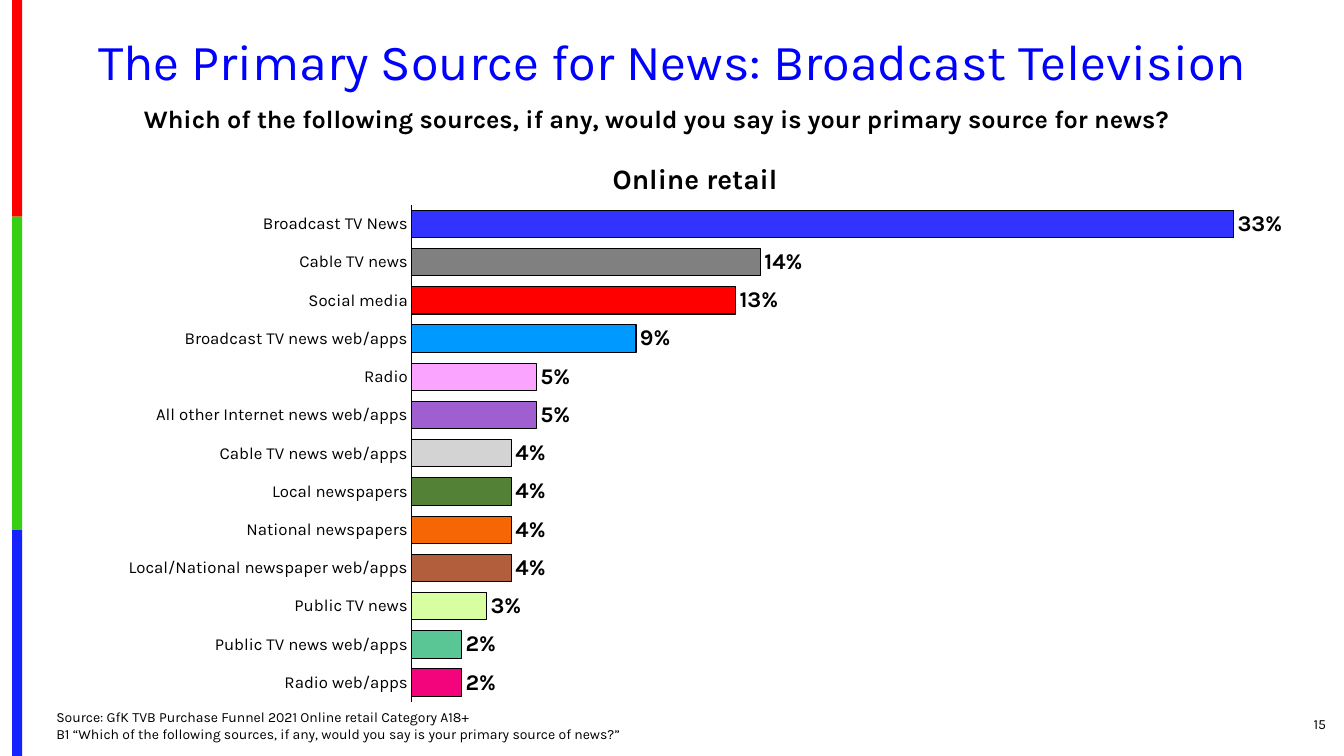
from lxml import etree
from pptx import Presentation
from pptx.chart.data import CategoryChartData
from pptx.dml.color import RGBColor
from pptx.enum import chart as ch, shapes, text
from pptx.oxml.ns import qn
from pptx.util import Inches, Pt

FONT = "Karla"
BLACK = RGBColor(0x00, 0x00, 0x00)
TITLE_BLUE = RGBColor(0x00, 0x00, 0xFF)
STRIPES = [
    (RGBColor(0xFE, 0x00, 0x00), 2.15),
    (RGBColor(0x36, 0xCF, 0x12), 3.11),
    (RGBColor(0x13, 0x22, 0xFE), 2.24),
]
SOURCES = [
    ("Broadcast TV News", 0.33, RGBColor(0x33, 0x33, 0xFF)),
    ("Cable TV news", 0.14, RGBColor(0x80, 0x80, 0x80)),
    ("Social media", 0.13, RGBColor(0xFF, 0x00, 0x00)),
    ("Broadcast TV news web/apps", 0.09, RGBColor(0x00, 0x99, 0xFF)),
    ("Radio", 0.05, RGBColor(0xFA, 0xA4, 0xFF)),
    ("All other Internet news web/apps", 0.05, RGBColor(0x9F, 0x5F, 0xD0)),
    ("Cable TV news web/apps", 0.04, RGBColor(0xD3, 0xD3, 0xD3)),
    ("Local newspapers", 0.04, RGBColor(0x53, 0x81, 0x35)),
    ("National newspapers", 0.04, RGBColor(0xF6, 0x66, 0x04)),
    ("Local/National newspaper web/apps", 0.04, RGBColor(0xB2, 0x5D, 0x3C)),
    ("Public TV news", 0.03, RGBColor(0xD7, 0xFF, 0xA1)),
    ("Public TV news web/apps", 0.02, RGBColor(0x5A, 0xC6, 0x95)),
    ("Radio web/apps", 0.02, RGBColor(0xF4, 0x04, 0x7C)),
]


def set_font(font, size, color=BLACK, bold=False):
    font.name = FONT
    font.size = Pt(size)
    font.bold = bold
    font.color.rgb = color


def write(sp, words, size, align=text.PP_ALIGN.LEFT, anchor=text.MSO_ANCHOR.TOP,
          color=BLACK, bold=False):
    tf = sp.text_frame
    tf.word_wrap = True
    tf.auto_size = text.MSO_AUTO_SIZE.NONE
    tf.vertical_anchor = anchor
    p = tf.paragraphs[0]
    p.text = words
    p.alignment = align
    set_font(p.font, size, color, bold)
    return p


def add_title(s, words):
    sp = s.shapes.title
    sp.left, sp.top = Inches(0.46), Inches(0.31)
    sp.width, sp.height = Inches(12.42), Inches(0.65)
    p = write(sp, words, 36, text.PP_ALIGN.CENTER, text.MSO_ANCHOR.MIDDLE, TITLE_BLUE)
    p.line_spacing = 0.9


def add_text(s, box, words, size, **style):
    sp = s.shapes.add_textbox(*map(Inches, box))
    write(sp, words, size, **style)


def add_stripes(s):
    top = 0
    for color, height in STRIPES:
        sp = s.shapes.add_shape(shapes.MSO_SHAPE.RECTANGLE, Inches(0.12), Inches(top),
                                Inches(0.1), Inches(height))
        sp.shadow.inherit = False
        sp.fill.solid()
        sp.fill.fore_color.rgb = color
        sp.line.fill.background()
        top += height


def place_plot(chart, x, y, w, h):
    area = chart._chartSpace.chart.plotArea
    for old in area.findall(qn("c:layout")):
        area.remove(old)
    layout = etree.Element(qn("c:layout"))
    manual = etree.SubElement(layout, qn("c:manualLayout"))
    settings = [("layoutTarget", "inner"), ("xMode", "edge"), ("yMode", "edge"),
                ("x", x), ("y", y), ("w", w), ("h", h)]
    for tag, val in settings:
        etree.SubElement(manual, qn("c:" + tag)).set("val", str(val))
    area.insert(0, layout)


def outline(line):
    line.color.rgb = BLACK
    line.width = Pt(0.75)


def add_news_chart(s):
    names, shares, colors = zip(*SOURCES)
    data = CategoryChartData(number_format="0%")
    data.categories = names
    data.add_series("Series 1", shares)
    chart = s.shapes.add_chart(ch.XL_CHART_TYPE.BAR_CLUSTERED, Inches(0.25), Inches(1.37),
                               Inches(13), Inches(5.61), data).chart
    chart.has_legend = False
    chart.has_title = False
    set_font(chart.font, 10)
    place_plot(chart, 0.295, 0.118, 0.665, 0.879)

    cat = chart.category_axis
    cat.reverse_order = True
    cat.major_tick_mark = cat.minor_tick_mark = ch.XL_TICK_MARK.NONE
    set_font(cat.tick_labels.font, 12)
    outline(cat.format.line)

    val = chart.value_axis
    val.minimum_scale, val.maximum_scale = 0, 0.35
    val.has_major_gridlines = False
    val.visible = False

    plot = chart.plots[0]
    plot.gap_width = 40
    plot.vary_by_categories = False
    plot.has_data_labels = True
    labels = plot.data_labels
    labels.show_value = True
    labels.number_format = "0%"
    labels.number_format_is_linked = False
    labels.position = ch.XL_LABEL_POSITION.OUTSIDE_END
    set_font(labels.font, 16, bold=True)

    for i, color in enumerate(colors):
        bar = plot.series[0].points[i].format
        bar.fill.solid()
        bar.fill.fore_color.rgb = color
        outline(bar.line)


def main():
    prs = Presentation()
    prs.slide_width, prs.slide_height = Inches(13.33), Inches(7.5)
    s = prs.slides.add_slide(prs.slide_layouts[5])
    add_stripes(s)
    add_title(s, "The Primary Source for News: Broadcast Television")
    add_text(s, (12.17, 6.98, 1.08, 0.4), "15", 10,
             align=text.PP_ALIGN.RIGHT, anchor=text.MSO_ANCHOR.MIDDLE)
    add_text(s, (0.46, 7.01, 9.45, 0.4),
             "Source: GfK TVB Purchase Funnel 2021 Online retail Category A18+\v"
             "B1 “Which of the following sources, if any, would you say is your "
             "primary source of news?”", 10, anchor=text.MSO_ANCHOR.BOTTOM)
    add_text(s, (1.33, 0.98, 11.14, 0.4),
             "Which of the following sources, if any, would you say is your "
             "primary source for news?", 18, bold=True)
    add_news_chart(s)
    add_text(s, (5.93, 1.55, 1.93, 0.44), "Online retail", 20,
             align=text.PP_ALIGN.CENTER, bold=True)
    prs.save("out.pptx")


if __name__ == "__main__":
    main()
